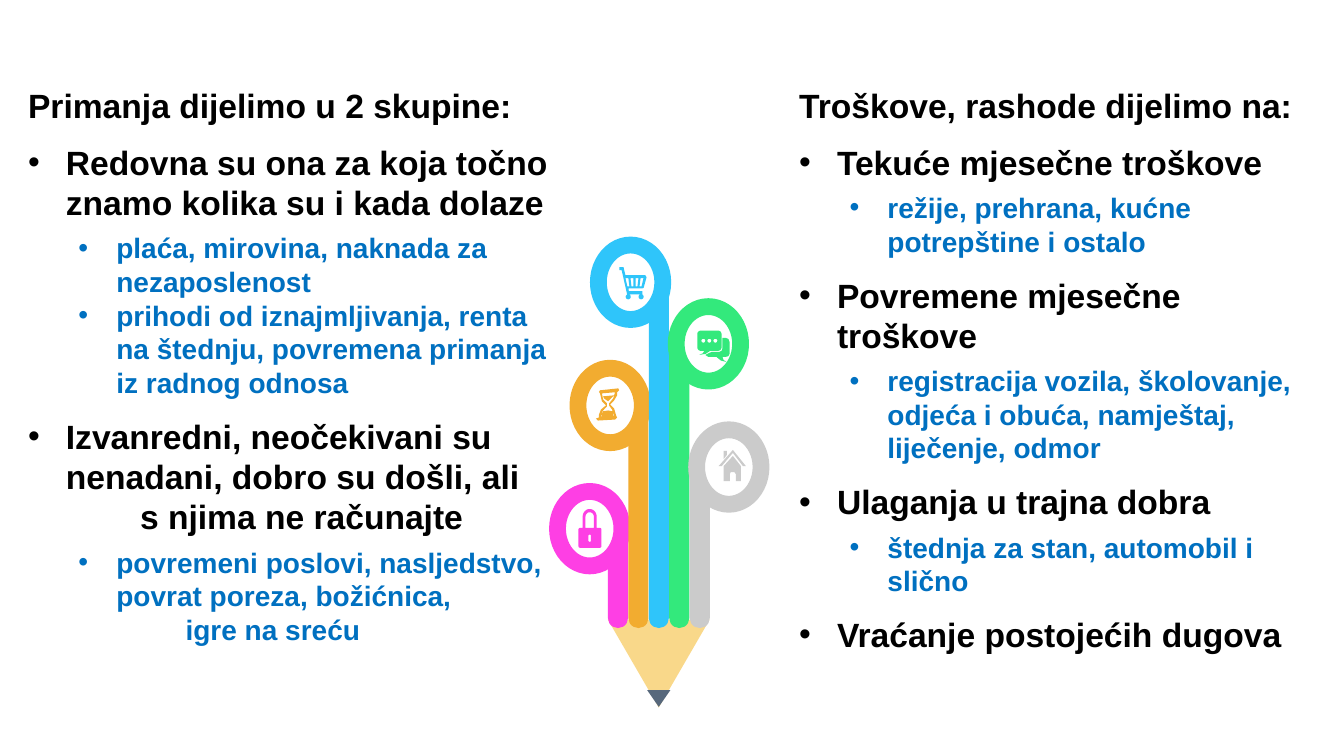
import math

from lxml import etree
from pptx import Presentation
from pptx import util as u
from pptx.dml.color import RGBColor
from pptx.enum import shapes, text
from pptx.oxml import ns

HUES = {
    "black": "000000", "blue": "0070C0", "white": "FFFFFF", "wood": "F5B317", "lead": "57687C",
    "pink": "FE3FE4", "orange": "F2AC30", "sky": "2FC5FA", "green": "33E97C", "grey": "CBCBCB",
}
FORM = shapes.MSO_SHAPE

INCOME = [
    ("head", "Primanja dijelimo u 2 skupine:", 12),
    ("main", "Redovna su ona za koja točno znamo kolika su i kada dolaze", 6),
    ("sub", "plaća, mirovina, naknada za nezaposlenost", 0),
    ("sub", "prihodi od iznajmljivanja, renta na štednju, povremena primanja iz radnog odnosa", 12),
    ("main", "Izvanredni, neočekivani su nenadani, dobro su došli, ali", 0),
    ("main tail", "s njima ne računajte", 6),
    ("sub", "povremeni poslovi, nasljedstvo, povrat poreza, božićnica,", 0),
    ("sub tail", "igre na sreću", 0),
]
COSTS = [
    ("head", "Troškove, rashode dijelimo na:", 12),
    ("main", "Tekuće mjesečne troškove", 6),
    ("sub", "režije, prehrana, kućne potrepštine i ostalo", 12),
    ("main", "Povremene mjesečne troškove", 6),
    ("sub", "registracija vozila, školovanje, odjeća i obuća, namještaj, liječenje, odmor", 12),
    ("main", "Ulaganja u trajna dobra", 6),
    ("sub", "štednja za stan, automobil i slično", 12),
    ("main", "Vraćanje postojećih dugova", 0),
]
STYLES = {
    "head": (0, 0, 0, 24, "black"),
    "main": (0, 27, -27, 24, "black"),
    "main tail": (0, 80, 0, 24, "black"),
    "sub": (1, 63, -27, 20, "blue"),
    "sub tail": (1, 112.5, 0, 20, "blue"),
}


def tint(name):
    """Return a named colour."""
    return RGBColor.from_string(HUES[name])


def arc(x, y, wide, high, start=0, end=360):
    """Return points along an ellipse arc."""
    turns = [math.radians(start + (end - start) * i / 24) for i in range(25)]
    return [(x + wide * math.cos(t), y + high * math.sin(t)) for t in turns]


def pad(left, top, right, foot, r):
    """Return the outline of a rounded box."""
    return (arc(left + r, top + r, r, r, 180, 270) + arc(right - r, top + r, r, r, 270, 360)
            + arc(right - r, foot - r, r, r, 0, 90) + arc(left + r, foot - r, r, r, 90, 180))


def lock():
    """Return the padlock outlines around its centre."""
    bow = arc(0, -8.5, 5, 5.5, 180, 360) + [(5, -0.5), (3, -0.5)]
    bow += arc(0, -8.5, 3, 3.2, 360, 180) + [(-3, -0.5), (-5, -0.5)]
    return [pad(-8, -0.5, 8.4, 13.7, 1.2), bow, pad(-0.9, 4.3, 0.9, 9.4, 0.8)]


def glass():
    """Return the hourglass outlines around its centre."""
    rim = [(-7.2, -10.8), (5.8, -12.2), (6.5, -10.8), (5, -9.4), (5, -7.2), (2.9, -3.6), (0, -0.7),
           (2.9, 2.2), (4.3, 7.2), (5, 8.6), (3.6, 10.1), (-8.6, 10.8), (-10.1, 9.4), (-7.9, 8.6),
           (-7.9, 6.5), (-6.5, 2.9), (-2.9, 0), (-5.8, -2.9), (-7.2, -8.6), (-7.9, -9.6)]
    hole = [(-5.8, -8.6), (-5, -4.3), (-2.2, -1.4), (-2.2, 0.7), (-5, 3.6), (-6.5, 7.9), (2.9, 7.2),
            (1.4, 2.9), (-0.7, 0), (-0.7, -1.4), (2.2, -5), (3.6, -9.4)]
    sand = [(-5, -6.5), (2.9, -7.2), (1.4, -5.8), (-1.4, -2.9), (-4.3, -5)]
    heap = [(-5.8, 7.9), (-5.8, 4.3), (-1.4, 3.6), (2.2, 4.3), (2.2, 7.2)]
    return [rim, hole, sand, heap]


def cart():
    """Return the shopping cart outlines around its centre."""
    frame = [(-7.9, -10.8), (-5, -10.8), (-3.6, -5), (10.6, -5), (11.5, -3.6), (9.4, 4.1),
             (8.4, 4.4), (-1.4, 4.4), (-1.2, 6.4), (8.6, 6.4), (8.6, 8.6), (-2.4, 8.6),
             (-6.3, -8.6), (-7.9, -8.6)]
    slots = [[(-3.6 + 3.6 * i, -2.9), (-1.5 + 3.6 * i, -2.9), (-0.8 + 2.9 * i, 2.9),
              (-2.2 + 2.9 * i, 2.9)] for i in range(4)]
    return [frame, *slots, *[arc(x, 10.4, 1.8, 1.8) for x in (-1.6, 7.6)]]


def chat():
    """Return the speech bubble outlines around their centre."""
    back = [(10.1, -4.3), (12.2, -4.3), (14.3, -3.5), (15.1, -1.4), (15.1, 7.2), (14.3, 8.8),
            (12.2, 9.4), (10.1, 9.4), (10.8, 11.5), (13, 13), (9, 12), (5.8, 9.4), (0, 9.4),
            (-2.2, 7.9), (2.2, 5.8), (7.9, 5.8), (9.6, 4.8), (10.1, 2.9)]
    tail = [(1.4, 5), (-2, 7.2), (-6.5, 7.9), (-4, 6.8), (-2.9, 5)]
    dots = [arc(x, -2.2, 1.4, 1.4) for x in (-3.6, 0.7, 5)]
    return [pad(-7.9, -9.4, 9.4, 5, 2.5), tail, back, *dots]


def house():
    """Return the house outlines around its centre."""
    roof = [(2.9, -12.2), (12.2, -0.7), (10.1, -0.7), (2.9, -10.1), (-5, -0.7), (-7.2, -0.7)]
    walls = [(2.9, -7.9), (8.6, -0.7), (8.6, 10.1), (5, 10.1), (5, 5), (4, 3.6), (1.4, 3.6),
             (0.7, 5), (0.7, 10.1), (-3.6, 10.1), (-3.6, -0.7)]
    flue = [(-3.6, -11.5), (-1.4, -11.5), (-1.4, -8.6), (-3.6, -5.8)]
    return [roof, walls, flue]


def paint(part, hue, edge=None):
    """Fill a shape and set its outline."""
    part.shadow.inherit = False
    part.fill.solid()
    part.fill.fore_color.rgb = tint(hue)
    if edge:
        part.line.color.rgb = tint(edge)
        part.line.width = u.Pt(12)
    else:
        part.line.fill.background()


def block(tree, form, box, hue, edge=None, turn=0):
    """Add a painted preset shape."""
    part = tree.add_shape(form, *map(u.Pt, box))
    part.rotation = turn
    paint(part, hue, edge)
    return part


def icon(tree, x, y, loops, hue):
    """Draw closed outlines around a centre as one shape."""
    pen = None
    for loop in loops:
        (left, top), *rest = [(u.Pt(x + a), u.Pt(y + b)) for a, b in loop]
        if pen is None:
            pen = tree.build_freeform(left, top)
        else:
            pen.move_to(left, top)
        pen.add_line_segments(rest, close=True)
    paint(pen.convert_to_shape(), hue)


def pencil(slide, left, top, wide, high):
    """Draw the pencil with its five looped bars inside a box."""
    tree = slide.shapes.add_group_shape().shapes
    foot = top + high
    wood = block(tree, FORM.TRAPEZOID, (left, foot - 62.8, wide, 62.8), "wood", turn=180)
    wood.adjustments[0] = 0.79
    tone = wood.fill._xPr.find(".//" + ns.qn("a:srgbClr"))
    etree.SubElement(tone, ns.qn("a:alpha"), val="50000")
    block(tree, FORM.ISOSCELES_TRIANGLE, (left + wide / 2 - 8.3, foot - 12.5, 16.6, 12), "lead", turn=180)
    bars = [("pink", 4, -36, lock), ("orange", 2, -36, glass), ("sky", 0, -36, cart),
            ("green", 1, 5, chat), ("grey", 3, 5, house)]
    for i, (hue, step, shift, draw) in enumerate(bars):
        x, y = left + 14.6 * i, top + 26.6 + 44 * step
        bar = block(tree, FORM.ROUND_2_SAME_RECTANGLE, (x, y, 14.4, foot - 56.8 - y), hue, turn=180)
        bar.adjustments[0], bar.adjustments[1] = 0.5, 0
        block(tree, FORM.OVAL, (x + shift, y - 26.6, 46, 53.2), "white", hue)
        icon(tree, x + shift + 23, y, draw(), hue)


def column(slide, box, lines):
    """Write a heading and its two-level list inside a box."""
    frame = slide.shapes.add_textbox(*map(u.Pt, box)).text_frame
    frame.word_wrap = True
    frame.auto_size = text.MSO_AUTO_SIZE.SHAPE_TO_FIT_TEXT
    for i, (kind, words, after) in enumerate(lines):
        para = frame.paragraphs[0] if i == 0 else frame.add_paragraph()
        level, margin, indent, size, hue = STYLES[kind]
        para.text = words
        para.level = level
        para.space_after = u.Pt(after)
        props = para._p.get_or_add_pPr()
        props.set("marL", str(u.Pt(margin)))
        props.set("indent", str(u.Pt(indent)))
        if indent:
            etree.SubElement(props, ns.qn("a:buFont"), typeface="Arial")
            etree.SubElement(props, ns.qn("a:buChar"), char="•")
        else:
            etree.SubElement(props, ns.qn("a:buNone"))
        font = para.runs[0].font
        font.name, font.size, font.bold = "Arial", u.Pt(size), True
        font.color.rgb = tint(hue)


def main():
    """Build and save the slide."""
    deck = Presentation()
    deck.slide_width, deck.slide_height = u.Pt(960), u.Pt(540)
    slide = deck.slides.add_slide(deck.slide_layouts[6])
    pencil(slide, 434.2, 175, 72.7, 330.4)
    column(slide, (13, 57, 393, 412), INCOME)
    column(slide, (563.8, 57, 374.4, 418), COSTS)
    deck.save("out.pptx")


if __name__ == "__main__":
    main()
